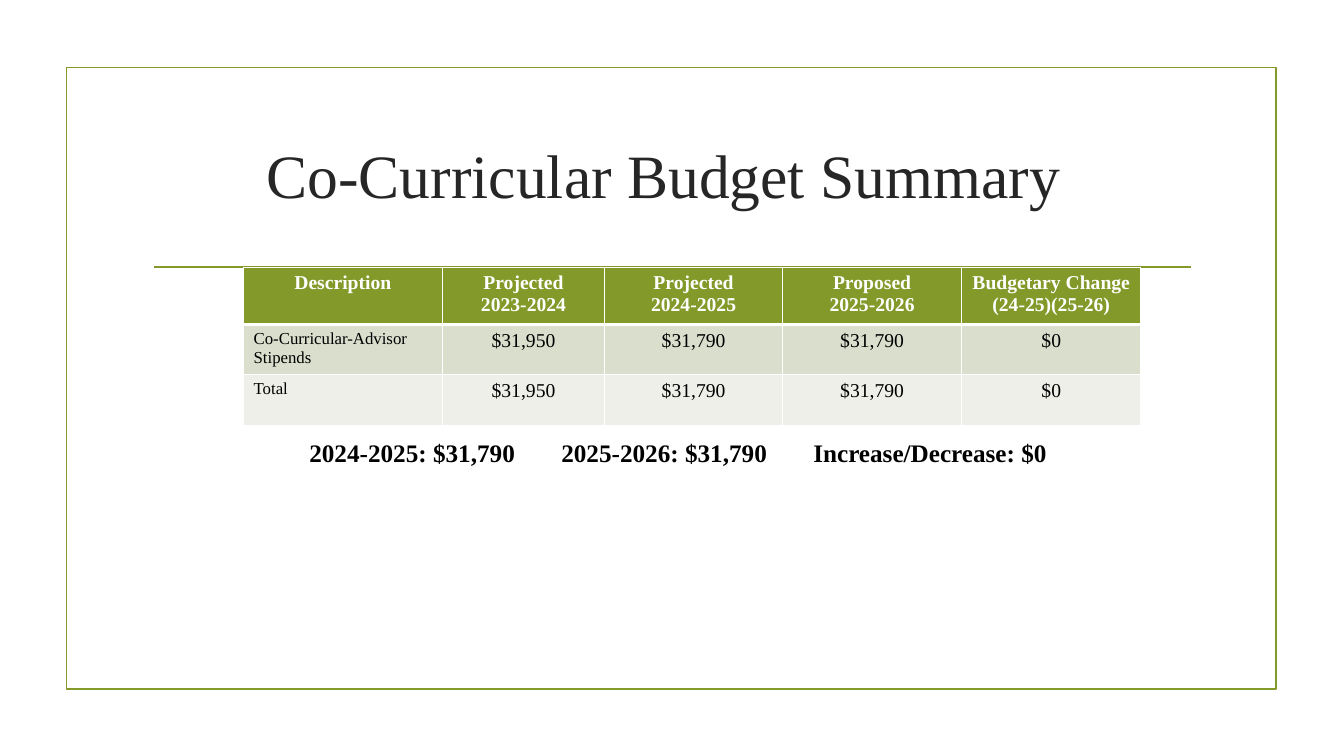
from dataclasses import dataclass

from lxml import etree
from pptx import Presentation
from pptx.dml.color import RGBColor
from pptx.enum.shapes import MSO_CONNECTOR, MSO_SHAPE
from pptx.enum.text import MSO_ANCHOR, MSO_AUTO_SIZE, PP_ALIGN
from pptx.oxml.ns import qn
from pptx.util import Pt

LEFT, CENTER = PP_ALIGN.LEFT, PP_ALIGN.CENTER
MIDDLE = MSO_ANCHOR.MIDDLE
NO_AUTOFIT = MSO_AUTO_SIZE.NONE
RECTANGLE = MSO_SHAPE.RECTANGLE
STRAIGHT = MSO_CONNECTOR.STRAIGHT

FONT = "Times New Roman"
GREEN = RGBColor(0x83, 0x99, 0x2A)
SAGE = RGBColor(0xD9, 0xDE, 0xCD)
PALE = RGBColor(0xED, 0xEF, 0xE8)
INK = RGBColor(0x26, 0x26, 0x26)
BLACK = RGBColor(0, 0, 0)
WHITE = RGBColor(0xFF, 0xFF, 0xFF)

COLUMN_WIDTHS = (142, 116, 127, 128, 128)
SUMMARY_TABS = (180, 360)


@dataclass(frozen=True)
class BudgetRow:
    values: tuple[str, ...]
    height: float
    fill: RGBColor
    header: bool = False


ROWS = (
    BudgetRow(("Description", "Projected\n2023-2024", "Projected\n2024-2025",
               "Proposed\n2025-2026", "Budgetary Change\n(24-25)(25-26)"),
              41, GREEN, header=True),
    BudgetRow(("Co-Curricular-Advisor Stipends", "$31,950", "$31,790", "$31,790", "$0"),
              36, SAGE),
    BudgetRow(("Total", "$31,950", "$31,790", "$31,790", "$0"), 36, PALE),
)


def write_text(frame, text: str, *, size: float, color: RGBColor = BLACK,
               bold: bool = False, align=CENTER, tabs: tuple[float, ...] = ()) -> None:
    """Fill a text frame, one paragraph for each line of text."""
    frame.word_wrap = True
    frame.text = text
    for para in frame.paragraphs:
        para.alignment = align
        if tabs:
            tab_list = etree.SubElement(para._p.get_or_add_pPr(), qn("a:tabLst"))
            for stop in tabs:
                etree.SubElement(tab_list, qn("a:tab"), pos=str(Pt(stop)), algn="l")
        for span in para.runs:
            span.font.name = FONT
            span.font.size = Pt(size)
            span.font.bold = bold
            span.font.color.rgb = color


def set_borders(cell, *, top: float, bottom: float) -> None:
    """Give a cell white borders; the side borders are 1 pt wide."""
    properties = cell._tc.get_or_add_tcPr()
    widths = {"a:lnL": 1, "a:lnR": 1, "a:lnT": top, "a:lnB": bottom}
    for index, (tag, width) in enumerate(widths.items()):
        border = etree.Element(qn(tag), w=str(Pt(width)))
        fill = etree.SubElement(border, qn("a:solidFill"))
        etree.SubElement(fill, qn("a:srgbClr"), val=str(WHITE))
        properties.insert(index, border)


def style_line(line) -> None:
    line.color.rgb = GREEN
    line.width = Pt(1.25)


def add_frame(page) -> None:
    frame = page.shapes.add_shape(RECTANGLE, Pt(47.5), Pt(48.2), Pt(864), Pt(444))
    frame.shadow.inherit = False
    frame.fill.background()
    style_line(frame.line)


def add_rule(page) -> None:
    rule = page.shapes.add_connector(STRAIGHT, Pt(110), Pt(190.8), Pt(850.5), Pt(190.8))
    etree.SubElement(rule._element.spPr, qn("a:effectLst"))
    style_line(rule.line)


def add_title(page) -> None:
    title = page.shapes.title
    title.left, title.top, title.width, title.height = Pt(96.2), Pt(57.5), Pt(756), Pt(133.2)
    title.text_frame.auto_size = NO_AUTOFIT
    title.text_frame.vertical_anchor = MIDDLE
    write_text(title.text_frame, "Co-Curricular Budget Summary", size=44, color=INK)


def add_budget_table(page) -> None:
    table = page.shapes.add_table(
        len(ROWS), len(COLUMN_WIDTHS), Pt(174), Pt(190.8),
        Pt(sum(COLUMN_WIDTHS)), Pt(sum(row.height for row in ROWS))).table
    for column, width in zip(table.columns, COLUMN_WIDTHS):
        column.width = Pt(width)
    for row_index, row in enumerate(ROWS):
        table.rows[row_index].height = Pt(row.height)
        below_header = row_index > 0 and ROWS[row_index - 1].header
        for column_index, value in enumerate(row.values):
            cell = table.cell(row_index, column_index)
            cell.fill.solid()
            cell.fill.fore_color.rgb = row.fill
            set_borders(cell, top=3 if below_header else 1, bottom=3 if row.header else 1)
            label = column_index == 0 and not row.header
            write_text(cell.text_frame, value, size=12 if label else 14,
                       color=WHITE if row.header else BLACK, bold=row.header,
                       align=LEFT if label else CENTER)


def add_summary(page) -> None:
    box = page.shapes.add_textbox(Pt(185.8), Pt(309), Pt(597), Pt(29))
    write_text(box.text_frame,
               "2024-2025: $31,790\t2025-2026: $31,790\tIncrease/Decrease: $0",
               size=18, bold=True, tabs=SUMMARY_TABS)


def main() -> None:
    deck = Presentation()
    deck.slide_width, deck.slide_height = Pt(960), Pt(540)
    page = deck.slides.add_slide(deck.slide_layouts[5])

    # Border and rule behind the content
    add_frame(page)
    add_rule(page)

    # Title, budget table and summary line
    add_title(page)
    add_budget_table(page)
    add_summary(page)

    deck.save("out.pptx")


if __name__ == "__main__":
    main()
